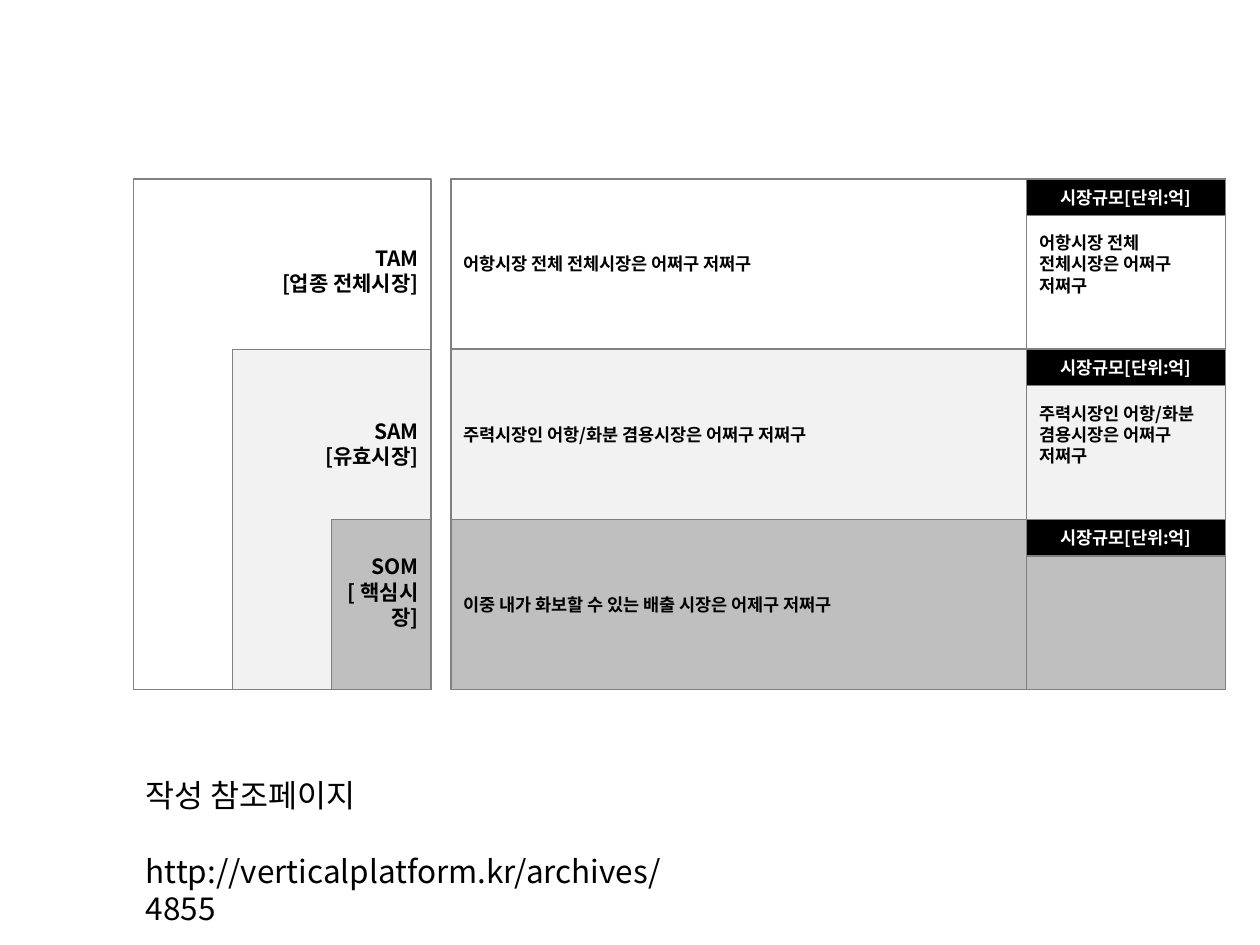
from lxml.etree import SubElement
from pptx import Presentation
from pptx.dml.color import RGBColor
from pptx.enum.shapes import MSO_SHAPE
from pptx.enum.text import MSO_ANCHOR, PP_ALIGN
from pptx.oxml.ns import qn
from pptx.util import Cm, Pt

FONT = "Noto Sans CJK KR"
COLORS = {
    "text": "000000",
    "header": "000000",
    "header_text": "FFFFFF",
    "border": "808080",
    "sam": "F2F2F2",
    "som": "BFBFBF",
}


def write(frame, lines, color, align, frame_format, font_format, gap=0):
    for name, value in frame_format.items():
        setattr(frame, name, value)
    for index, line in enumerate(lines):
        paragraph = frame.paragraphs[0] if index == 0 else frame.add_paragraph()
        paragraph.alignment = align
        if index:
            paragraph.space_before = Pt(gap)
        run = paragraph.add_run()
        run.text = line
        run.font.color.rgb = RGBColor.from_string(COLORS[color])
        for name, value in {"name": FONT, **font_format}.items():
            setattr(run.font, name, value)
        SubElement(run.font._element, qn("a:ea"), typeface=FONT)


def add_box(left, top, width, height, fill, lines, size=10, color="text",
            align=PP_ALIGN.LEFT, bottom=0.13):
    box = slide.shapes.add_shape(
        MSO_SHAPE.RECTANGLE, Cm(left), Cm(top), Cm(width), Cm(height))
    box.shadow.inherit = False
    if fill:
        box.fill.solid()
        box.fill.fore_color.rgb = RGBColor.from_string(COLORS[fill])
    else:
        box.fill.background()
    box.line.color.rgb = RGBColor.from_string(COLORS["border"])
    box.line.width = Pt(0.75)
    frame_format = {
        "word_wrap": True,
        "vertical_anchor": MSO_ANCHOR.MIDDLE,
        "margin_bottom": Cm(bottom),
    }
    write(box.text_frame, lines, color, align, frame_format,
          {"size": Pt(size), "bold": True})


presentation = Presentation()
presentation.slide_width = Cm(25.4)
presentation.slide_height = Cm(19.05)
slide = presentation.slides.add_slide(presentation.slide_layouts[6])

left_edge, top_edge = 2.69, 3.61
row_height, nest_step = 3.43, 2
detail_left, detail_width = 9.09, 11.61
size_left, size_width = detail_left + detail_width, 4
header_height = 0.74

tam_text = "어항시장 전체 전체시장은 어쩌구 저쩌구"
sam_text = "주력시장인 어항/화분 겸용시장은 어쩌구 저쩌구"
som_text = "이중 내가 화보할 수 있는 배출 시장은 어제구 저쩌구"
markets = [
    (None, ["TAM", "[업종 전체시장]"], 6.73, tam_text, [tam_text]),
    ("sam", ["SAM", "[유효시장]"], 3.18, sam_text, [sam_text]),
    ("som", ["SOM", "[ 핵심시장]"], 0.64, som_text, []),
]

for row, (fill, label, label_bottom, detail, market_size) in enumerate(markets):
    top = top_edge + row * row_height
    levels = len(markets) - row
    add_box(left_edge + row * nest_step, top, levels * nest_step,
            levels * row_height, fill, label, size=12,
            align=PP_ALIGN.RIGHT, bottom=label_bottom)
    add_box(detail_left, top, detail_width, row_height, fill, [detail])
    add_box(size_left, top, size_width, row_height, fill, market_size)
    add_box(size_left, top, size_width, header_height, "header",
            ["시장규모[단위:억]"], color="header_text", align=PP_ALIGN.CENTER)

reference = slide.shapes.add_textbox(Cm(left_edge), Cm(15.52), Cm(11.81), Cm(2.57))
write(reference.text_frame,
      ["작성 참조페이지", "http://verticalplatform.kr/archives/4855"],
      "text", PP_ALIGN.LEFT, {"word_wrap": True}, {"size": Pt(18)}, gap=21.6)

presentation.save("out.pptx")
